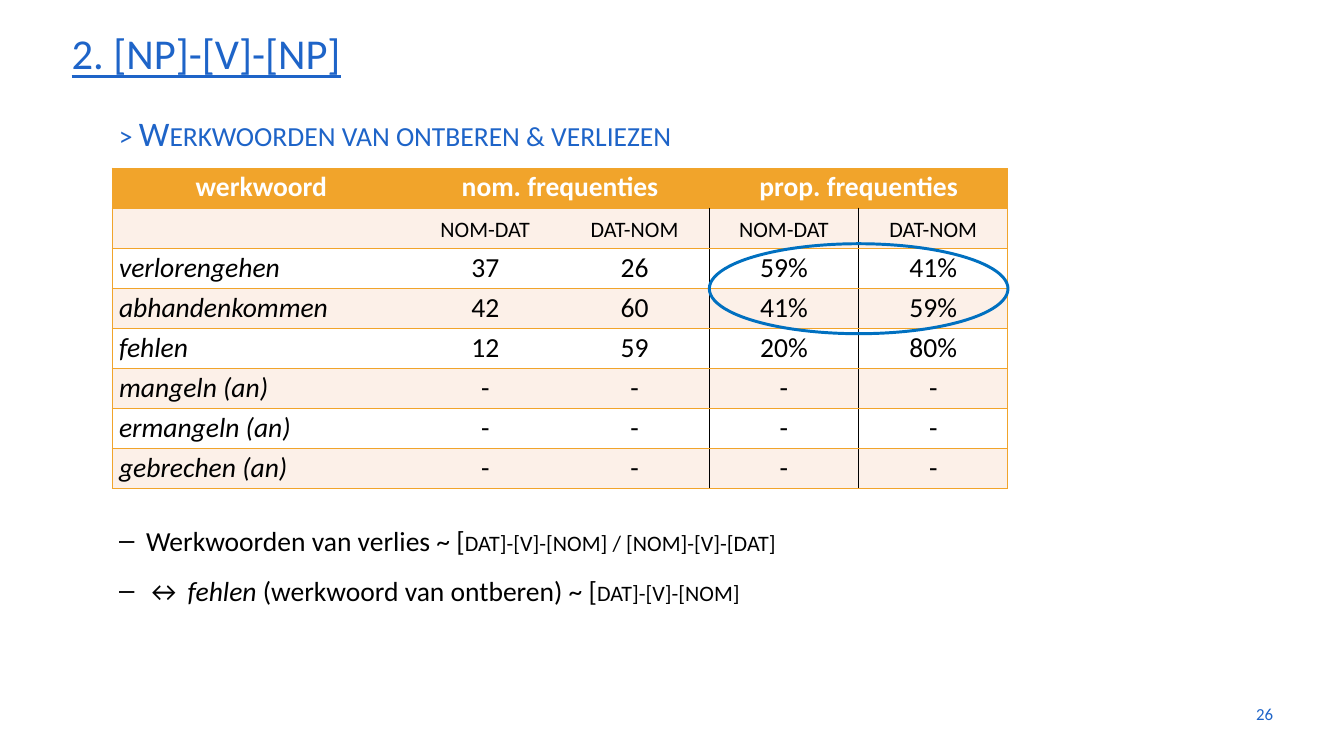
from lxml import etree
from pptx import Presentation
from pptx.dml.color import RGBColor
from pptx.enum.shapes import MSO_SHAPE
from pptx.enum.text import MSO_ANCHOR, MSO_AUTO_SIZE, PP_ALIGN
from pptx.oxml.ns import qn
from pptx.util import Inches, Pt

LEFT, CENTER, RIGHT = PP_ALIGN.LEFT, PP_ALIGN.CENTER, PP_ALIGN.RIGHT
TOP, MIDDLE = MSO_ANCHOR.TOP, MSO_ANCHOR.MIDDLE
COLORS = {"blue": "1E64C8", "ring": "0070C0", "orange": "F1A42B",
          "band": "FCF0E8", "white": "FFFFFF", "black": "000000"}

presentation = Presentation()
presentation.slide_width = Inches(18.96)
presentation.slide_height = Inches(10.67)
slide = presentation.slides.add_slide(presentation.slide_layouts[1])

# Nine grid columns over the slide; the table takes six of them
column = presentation.slide_width // 9
table_left = presentation.slide_width // 12
table_top = Inches(2.37)
row_height = Inches(0.566)


def write(paragraph, runs, size, color, align=LEFT, spacing=None):
    """Add (text, style) runs; style is "", "small" or "italic"."""
    paragraph.alignment = align
    paragraph.line_spacing = spacing
    paragraph.space_before = Pt(0)
    paragraph.font.name = "Calibri"
    paragraph.font.size = Pt(size)
    paragraph.font.color.rgb = RGBColor.from_string(COLORS[color])
    for text, style in runs:
        run = paragraph.add_run()
        run.text = text
        if style == "small":
            run.font._element.set("cap", "small")
        elif style == "italic":
            run.font.italic = True


def place(shape, left, top, width, height, anchor=TOP):
    """Move a text shape and return its text frame."""
    shape.left, shape.top, shape.width, shape.height = left, top, width, height
    frame = shape.text_frame
    frame.word_wrap = True
    frame.auto_size = MSO_AUTO_SIZE.NONE
    frame.vertical_anchor = anchor
    return frame


# Title
title = place(slide.shapes.title, Inches(0.91), Inches(0.28), Inches(17.18), Inches(0.94))
write(title.paragraphs[0], [("2. [np]-[v]-[np]", "small")], 54, "blue", spacing=0.9)
title.paragraphs[0].font.underline = True

# Slide number and subheading
for text, style, size, align, spacing, anchor, box in [
    ("26", "", 17.1, RIGHT, None, MIDDLE, (17.05, 9.79, 1.01, 0.57)),
    ("> Werkwoorden van ontberen & verliezen", "small", 35, LEFT, 1.2, TOP,
     (1.58, 1.42, 9.28, 0.75)),
]:
    lengths = [Inches(value) for value in box]
    frame = place(slide.shapes.add_textbox(*lengths), *lengths, anchor)
    write(frame.paragraphs[0], [(text, style)], size, "blue", align, spacing)

# Conclusions
conclusions = place(slide.placeholders[1], table_left, Inches(7.11), Inches(11.39), Inches(1.43))
for index, runs in enumerate([
    [("Werkwoorden van verlies ~ [", ""), ("dat]-[v]-[nom] / [nom]-[v]-[dat]", "small")],
    [("↔ ", ""), ("fehlen", "italic"), (" (werkwoord van ontberen) ~ [", ""),
     ("dat]-[v]-[nom]", "small")],
]):
    paragraph = conclusions.paragraphs[0] if index == 0 else conclusions.add_paragraph()
    properties = paragraph._p.get_or_add_pPr()
    properties.set("marL", str(Inches(0.38)))
    properties.set("indent", str(-Inches(0.38)))
    etree.SubElement(properties, qn("a:buChar"), char="–")
    write(paragraph, runs, 28, "black", spacing=1.5)

# Frequency table
rows = [
    ["werkwoord", "nom. frequenties", "", "prop. frequenties", ""],
    ["", "nom-dat", "dat-nom", "nom-dat", "dat-nom"],
    ["verlorengehen", "37", "26", "59%", "41%"],
    ["abhandenkommen", "42", "60", "41%", "59%"],
    ["fehlen", "12", "59", "20%", "80%"],
    ["mangeln (an)"] + ["-"] * 4,
    ["ermangeln (an)"] + ["-"] * 4,
    ["gebrechen (an)"] + ["-"] * 4,
]
table = slide.shapes.add_table(len(rows), 5, table_left, table_top,
                               6 * column, len(rows) * row_height).table
table.first_row = table.horz_banding = False
for index, table_column in enumerate(table.columns):
    table_column.width = 2 * column if index == 0 else column
for row in table.rows:
    row.height = row_height
for first in (1, 3):
    table.cell(0, first).merge(table.cell(0, first + 1))

for row_index, values in enumerate(rows):
    header = row_index == 0
    # Colours of the vertical lines, from the left edge to the right edge
    inner = [None] * 4 if header else [None, None, "black", "black"]
    verticals = ["orange"] + inner + ["orange"]
    for column_index, text in enumerate(values):
        cell = table.cell(row_index, column_index)
        cell.margin_top = cell.margin_bottom = Inches(0.04)
        borders = {"lnL": verticals[column_index], "lnR": verticals[column_index + 1],
                   "lnT": "orange", "lnB": "orange"}
        for side, color in borders.items():
            line = etree.SubElement(cell._tc.get_or_add_tcPr(), qn("a:" + side), w=str(Pt(1)))
            if color:
                fill = etree.SubElement(line, qn("a:solidFill"))
                etree.SubElement(fill, qn("a:srgbClr"), val=COLORS[color])
            else:
                etree.SubElement(line, qn("a:noFill"))
        background = "orange" if header else "band" if row_index % 2 else "white"
        cell.fill.solid()
        cell.fill.fore_color.rgb = RGBColor.from_string(COLORS[background])
        if text:
            verb = row_index > 1 and column_index == 0
            style = "small" if row_index == 1 else "italic" if verb else ""
            paragraph = cell.text_frame.paragraphs[0]
            write(paragraph, [(text, style)], 28, "white" if header else "black",
                  LEFT if verb else CENTER)
            paragraph.font.bold = header

# Ring around the proportions of the two verbs of loss
ring = slide.shapes.add_shape(MSO_SHAPE.OVAL, table_left + 4 * column, Inches(3.44),
                              2 * column, Inches(1.27))
ring.shadow.inherit = False
ring.fill.background()
ring.line.color.rgb = RGBColor.from_string(COLORS["ring"])
ring.line.width = Pt(3)

presentation.save("out.pptx")
